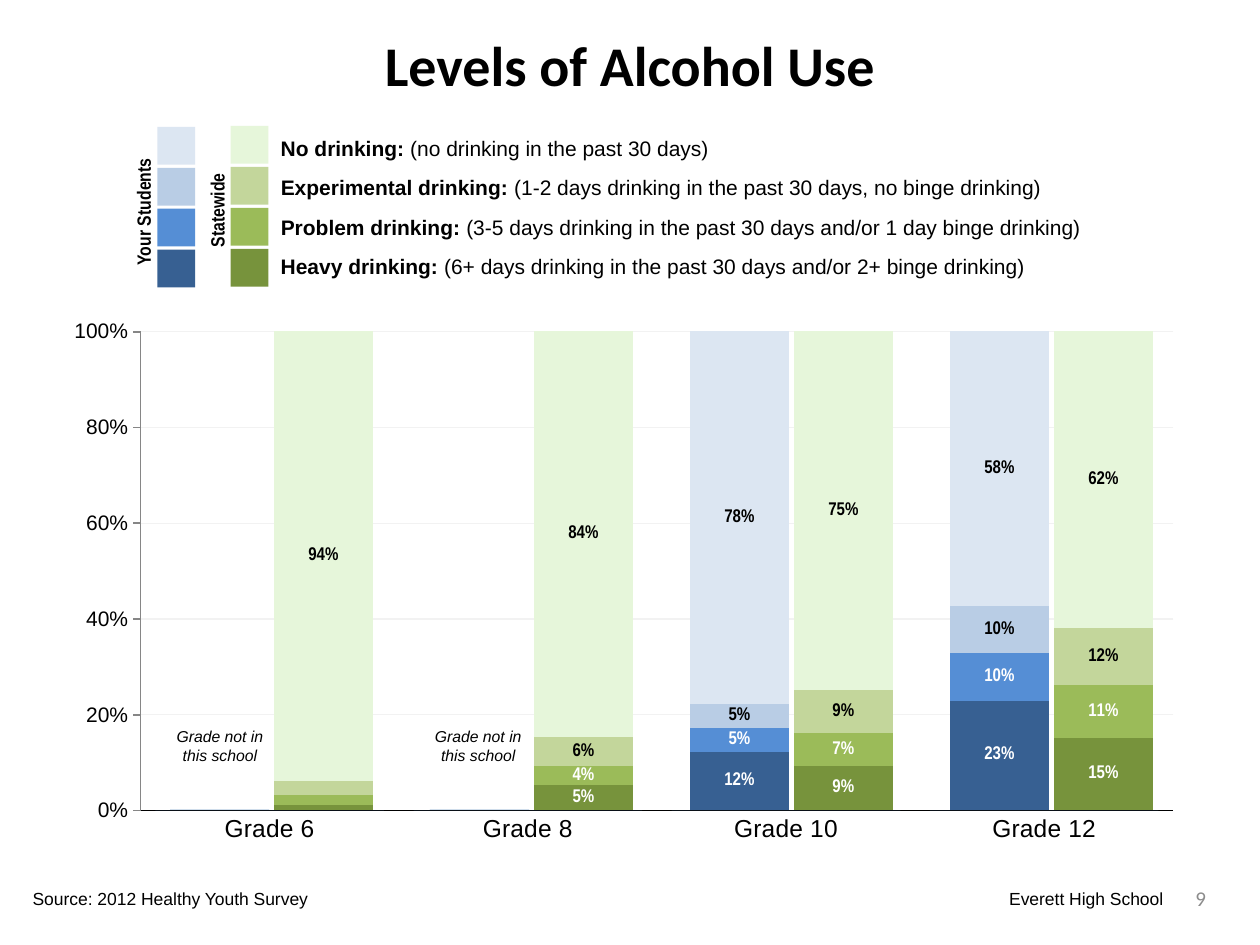
"""Build the alcohol use slide with its legend and stacked grade charts."""
from dataclasses import dataclass
from typing import Any

import pptx
import pptx.chart.data
import pptx.dml.color
import pptx.enum.chart
import pptx.enum.shapes
import pptx.enum.text
import pptx.oxml
import pptx.oxml.ns
import pptx.util

Pt = pptx.util.Pt
ALIGN = pptx.enum.text.PP_ALIGN
ANCHOR = pptx.enum.text.MSO_ANCHOR
TICK = pptx.enum.chart.XL_TICK_MARK
LABELS = pptx.enum.chart.XL_TICK_LABEL_POSITION
BLACK = "000000"
WHITE = "FFFFFF"
SWATCH_SIZE = 21.6
SWATCH_STEP = 23.4
CHART_STEP = 148.56


@dataclass(frozen=True)
class Box:
    left: float
    top: float
    width: float
    height: float

    def lengths(self) -> list[pptx.util.Length]:
        return [Pt(value) for value in (self.left, self.top, self.width, self.height)]


@dataclass(frozen=True)
class Level:
    name: str
    detail: str
    width: float
    student_color: str
    state_color: str
    label_color: str


@dataclass(frozen=True)
class Grade:
    name: str
    statewide: tuple[float, ...]
    students: tuple[float, ...] = (0, 0, 0, 0)


@dataclass(frozen=True)
class Label:
    text: str
    box: Box
    size: float
    font: str = "Arial"
    bold: bool = False
    italic: bool = False
    color: str = BLACK
    align: Any = ALIGN.LEFT
    anchor: Any = ANCHOR.TOP
    wrap: bool = False
    rotation: float = 0
    insets: tuple[float, float, float, float] = (7.2, 3.6, 7.2, 3.6)


LEVELS = [
    Level("No drinking: ", "(no drinking in the past 30 days)", 261.4, "DCE6F2", "E6F6DA", BLACK),
    Level("Experimental drinking: ", "(1-2 days drinking in the past 30 days, no binge drinking)",
          452.9, "B9CDE5", "C3D69B", BLACK),
    Level("Problem drinking: ", "(3-5 days drinking in the past 30 days and/or 1 day binge drinking)",
          475.9, "558ED5", "9BBB59", WHITE),
    Level("Heavy drinking: ", "(6+ days drinking in the past 30 days and/or 2+ binge drinking)",
          443.5, "376092", "77933C", WHITE),
]
GRADES = [
    Grade("Grade 6", (0.01, 0.02, 0.03, 0.94)),
    Grade("Grade 8", (0.05, 0.04, 0.06, 0.84)),
    Grade("Grade 10", (0.09, 0.07, 0.09, 0.75), (0.12, 0.05, 0.05, 0.78)),
    Grade("Grade 12", (0.15, 0.11, 0.12, 0.62), (0.23, 0.10, 0.10, 0.58)),
]
LABEL_LIST = [
    Label("Your Students", Box(43.92, 110.16, 76.32, 20.88), 11, "Arial Narrow", True, rotation=270),
    Label("Statewide", Box(95.76, 109.44, 56.88, 20.88), 11, "Arial Narrow", True, rotation=270),
    Label("Levels of Alcohol Use", Box(18, 12.24, 684, 48.24), 32, "Calibri", True,
          align=ALIGN.CENTER, anchor=ANCHOR.MIDDLE, wrap=True),
    Label("Source: 2012 Healthy Youth Survey", Box(11.52, 504, 174.24, 19.44), 10),
    Label("Everett High School", Box(234, 504, 437.76, 19.44), 10, align=ALIGN.RIGHT),
    Label("9", Box(660.24, 498.96, 36, 28.8), 12, "Calibri", color="8C8C8C",
          align=ALIGN.RIGHT, anchor=ANCHOR.MIDDLE, wrap=True),
]


def rgb(color: str) -> pptx.dml.color.RGBColor:
    return pptx.dml.color.RGBColor.from_string(color)


def paint(fill: Any, color: str) -> None:
    fill.solid()
    fill.fore_color.rgb = rgb(color)


def add_label(slide: Any, label: Label) -> Any:
    shape = slide.shapes.add_textbox(*label.box.lengths())
    shape.rotation = label.rotation
    frame = shape.text_frame
    frame.word_wrap = label.wrap
    frame.vertical_anchor = label.anchor
    frame.margin_left, frame.margin_top, frame.margin_right, frame.margin_bottom = map(Pt, label.insets)
    paragraph = frame.paragraphs[0]
    paragraph.alignment = label.align
    paragraph.add_run().text = label.text
    font = paragraph.font
    font.name, font.size = label.font, Pt(label.size)
    font.bold, font.italic = label.bold, label.italic
    font.color.rgb = rgb(label.color)
    return paragraph


def add_swatch(slide: Any, left: float, top: float, color: str) -> None:
    shape = slide.shapes.add_shape(pptx.enum.shapes.MSO_SHAPE.RECTANGLE,
                                   *Box(left, top, SWATCH_SIZE, SWATCH_SIZE).lengths())
    shape.shadow.inherit = False
    paint(shape.fill, color)
    shape.line.fill.background()


def add_legend_row(slide: Any, row: int, level: Level) -> None:
    add_swatch(slide, 90, 72.5 + row * SWATCH_STEP, level.student_color)
    add_swatch(slide, 131.76, 72 + row * SWATCH_STEP, level.state_color)
    paragraph = add_label(slide, Label(level.name, Box(153.36, 74.16 + row * 22.32, level.width, 21.6), 12))
    paragraph.runs[0].font.bold = True
    paragraph.add_run().text = level.detail


def add_stacked_chart(slide: Any, box: Box, categories: list[str], rows: list[tuple[str, Any]],
                      gap: int, layout: tuple[float, float, float, float]) -> Any:
    data = pptx.chart.data.CategoryChartData(number_format="0%")
    data.categories = categories
    for name, values in rows:
        data.add_series(name, values)
    chart = slide.shapes.add_chart(pptx.enum.chart.XL_CHART_TYPE.COLUMN_STACKED_100, *box.lengths(), data).chart
    chart.has_legend = chart.has_title = False
    chart.font.name, chart.font.size = "Calibri", Pt(10)
    chart.font.color.rgb = rgb(BLACK)
    chart.plots[0].gap_width, chart.plots[0].overlap = gap, 100
    axis = chart.value_axis
    axis.minimum_scale, axis.maximum_scale, axis.major_unit = 0, 1, 0.2
    chart.category_axis.major_tick_mark = TICK.NONE

    namespaces = pptx.oxml.ns.nsdecls("c", "a")
    clear = f"<c:spPr {namespaces}><a:noFill/><a:ln><a:noFill/></a:ln></c:spPr>"
    space = chart.element
    space.xpath("c:chart")[0].addnext(pptx.oxml.parse_xml(clear))
    plot_area = space.xpath("c:chart/c:plotArea")[0]
    plot_area.append(pptx.oxml.parse_xml(clear))
    for old_layout in plot_area.xpath("c:layout"):
        plot_area.remove(old_layout)
    sizes = "".join(f'<c:{key} val="{value}"/>' for key, value in zip("xywh", layout))
    plot_area.insert(0, pptx.oxml.parse_xml(
        f'<c:layout {namespaces}><c:manualLayout><c:layoutTarget val="inner"/>'
        f'<c:xMode val="edge"/><c:yMode val="edge"/>{sizes}</c:manualLayout></c:layout>'))
    return chart


def add_axis_chart(slide: Any) -> None:
    chart = add_stacked_chart(slide, Box(42.48, 180, 629.28, 309.6), [grade.name for grade in GRADES],
                              [("Series 1", [0] * len(GRADES))], 13, (0.06, 0.031, 0.938, 0.884))
    for axis, size, color in ((chart.category_axis, 14, BLACK), (chart.value_axis, 12, "868686")):
        axis.tick_labels.font.name, axis.tick_labels.font.size = "Arial", Pt(size)
        axis.format.line.color.rgb = rgb(color)
        axis.format.line.width = Pt(1)
    chart.value_axis.major_tick_mark = TICK.OUTSIDE
    chart.value_axis.tick_labels.number_format = "0%"
    chart.value_axis.tick_labels.number_format_is_linked = False
    gridline = chart.value_axis.major_gridlines.format.line
    gridline.color.rgb, gridline.width = rgb("F2F2F2"), Pt(0.75)


def add_grade_chart(slide: Any, index: int, grade: Grade) -> None:
    rows = [(f"Series {number}", pair)
            for number, pair in enumerate(zip(grade.statewide, grade.students), 1)]
    chart = add_stacked_chart(slide, Box(95.76 + index * CHART_STEP, 183.6, 118.8, 291.6),
                              ["1", "2"], rows, 5, (0, 0.02, 1, 0.937))
    chart.category_axis.reverse_order = True
    chart.value_axis.has_major_gridlines = False
    chart.value_axis.major_tick_mark = TICK.NONE
    for axis in (chart.category_axis, chart.value_axis):
        axis.tick_label_position = LABELS.NONE
        axis.format.line.fill.background()
    for series, level in zip(chart.plots[0].series, reversed(LEVELS)):
        paint(series.format.fill, level.student_color)
        paint(series.points[0].format.fill, level.state_color)
        labels = series.data_labels
        labels.show_value = True
        labels.position = pptx.enum.chart.XL_LABEL_POSITION.CENTER
        labels.number_format, labels.number_format_is_linked = '[<0.04]" ";0%', False
        labels.font.name, labels.font.size, labels.font.bold = "Arial Narrow", Pt(10.5), True
        labels.font.color.rgb = rgb(level.label_color)


def main() -> None:
    presentation = pptx.Presentation()
    presentation.slide_width, presentation.slide_height = Pt(720), Pt(540)
    slide = presentation.slides.add_slide(presentation.slide_layouts[6])
    add_axis_chart(slide)
    for index, grade in enumerate(GRADES):
        add_grade_chart(slide, index, grade)
        if not any(grade.students):
            add_label(slide, Label("Grade not in this school", Box(98.64 + index * 147.6, 336.24, 54, 108), 9,
                                   italic=True, align=ALIGN.CENTER, anchor=ANCHOR.BOTTOM, wrap=True,
                                   insets=(0, 0, 0, 7.2)))
    for row, level in enumerate(LEVELS):
        add_legend_row(slide, row, level)
    for label in LABEL_LIST:
        add_label(slide, label)
    presentation.save("out.pptx")


if __name__ == "__main__":
    main()
